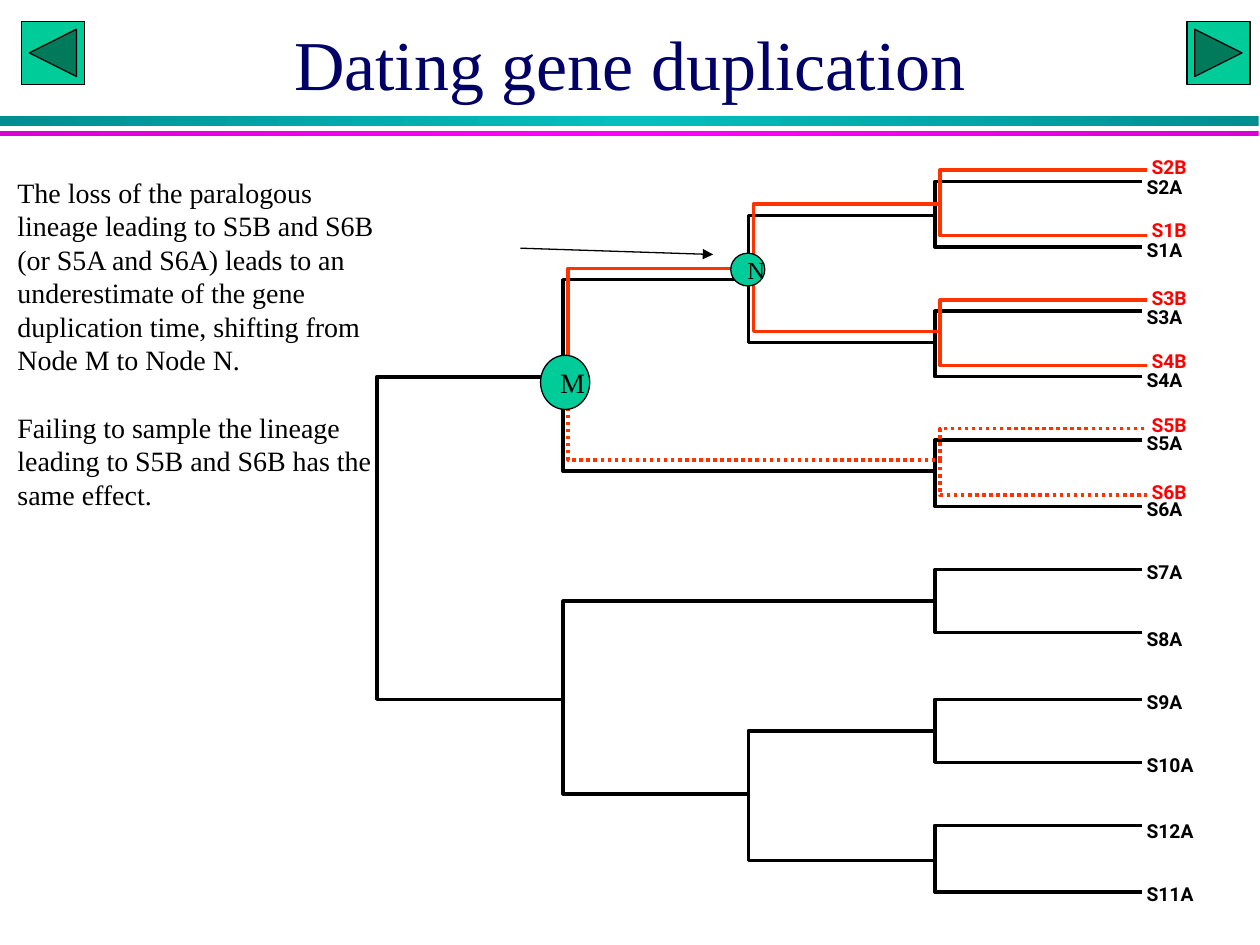
from copy import deepcopy

from lxml import etree
from pptx import Presentation
from pptx.dml.color import RGBColor
from pptx.enum.dml import MSO_LINE
from pptx.enum.shapes import MSO_CONNECTOR, MSO_SHAPE
from pptx.enum.text import MSO_ANCHOR, PP_ALIGN
from pptx.oxml.ns import qn
from pptx.util import Inches, Pt

RECTANGLE, OVAL = MSO_SHAPE.RECTANGLE, MSO_SHAPE.OVAL
BACK = MSO_SHAPE.ACTION_BUTTON_BACK_OR_PREVIOUS
FORWARD = MSO_SHAPE.ACTION_BUTTON_FORWARD_OR_NEXT
STRAIGHT, DOTTED = MSO_CONNECTOR.STRAIGHT, MSO_LINE.ROUND_DOT
LEFT, CENTER = PP_ALIGN.LEFT, PP_ALIGN.CENTER
TOP, MIDDLE = MSO_ANCHOR.TOP, MSO_ANCHOR.MIDDLE

SERIF, SANS = "Times New Roman", "Roboto"
BLACK, NAVY, GREEN = "000000", "000066", "00CC99"
LABEL_RED, BRANCH_RED = "FF0000", "FF3300"

# Branching columns and the offset of the duplicated (B) lineage
ROOT_X, CLADE_X, INNER_X, PAIR_X, TIP_X = 2.99, 4.47, 5.94, 7.42, 9.06
SHIFT_X, SHIFT_Y = 0.04, -0.09

# Node: (x, y, children); tip: (species, y, top of A label, top of B label)
DUPLICATED = (CLADE_X, 2.99, [
    (INNER_X, 2.22, [
        (PAIR_X, 1.71, [("S2", 1.44, 1.39, 1.23), ("S1", 1.96, 1.89, 1.73)]),
        (PAIR_X, 2.72, [("S3", 2.47, 2.42, 2.27), ("S4", 2.99, 2.92, 2.77)])]),
    (PAIR_X, 3.74, [("S5", 3.49, 3.42, 3.28), ("S6", 4.02, 3.95, 3.81)])])
OUTGROUP = (CLADE_X, 5.55, [
    (PAIR_X, 4.77, [("S7", 4.52, 4.45, None), ("S8", 5.02, 4.98, None)]),
    (INNER_X, 6.3, [
        (PAIR_X, 5.8, [("S9", 5.55, 5.48, None), ("S10", 6.05, 5.98, None)]),
        (PAIR_X, 6.83, [("S12", 6.55, 6.5, None), ("S11", 7.08, 7, None)])])])
ROOT = (ROOT_X, 4.27, [DUPLICATED, OUTGROUP])
LOST_Y = 3.74  # node of the S5B and S6B lineage


def color(code):
    return RGBColor.from_string(code)


class Slide:
    def __init__(self, page):
        self.page = page

    def outline(self, shape, code, width):
        shape.line.color.rgb = color(code)
        shape.line.width = Pt(width)

    def line_detail(self, shape, tag, **attributes):
        line = shape._element.spPr.find(qn("a:ln"))
        etree.SubElement(line, qn(tag), **attributes)

    def shape(self, kind, left, top, width, height):
        shape = self.page.shapes.add_shape(
            kind, Inches(left), Inches(top), Inches(width), Inches(height))
        shape.shadow.inherit = False
        return shape

    def green(self, kind, left, top, width, height):
        shape = self.shape(kind, left, top, width, height)
        shape.fill.solid()
        shape.fill.fore_color.rgb = color(GREEN)
        self.outline(shape, BLACK, 0.75)
        return shape

    def band(self, top, height, edge, middle):
        band = self.shape(RECTANGLE, 0, top, 9.99, height)
        band.line.fill.background()
        band.fill.gradient()
        band.fill.gradient_angle = 0
        stop_list = band._element.spPr.find(qn("a:gradFill")).find(qn("a:gsLst"))
        stop_list.append(deepcopy(stop_list[0]))
        for index, stop in enumerate(band.fill.gradient_stops):
            stop.position = index / 2
            stop.color.rgb = color(middle if index == 1 else edge)

    def add_words(self, frame, paragraphs, size, font=SERIF, code=BLACK,
                  bold=False, align=LEFT, anchor=TOP, gap=0):
        frame.vertical_anchor = anchor
        for index, words in enumerate(paragraphs):
            para = frame.add_paragraph() if index else frame.paragraphs[0]
            para.alignment = align
            if index:
                para.space_before = Pt(gap)
            span = para.add_run()
            span.text = words
            span.font.size, span.font.name = Pt(size), font
            span.font.bold = bold
            span.font.color.rgb = color(code)

    def text(self, left, top, width, height, paragraphs, size, wrap=True, **style):
        box = self.page.shapes.add_textbox(
            Inches(left), Inches(top), Inches(width), Inches(height))
        frame = box.text_frame
        frame.word_wrap = wrap
        if not wrap:
            frame.margin_left = frame.margin_right = 0
            frame.margin_top = frame.margin_bottom = 0
        self.add_words(frame, paragraphs, size, **style)

    def label(self, left, top, name, code):
        width = 0.1 * len(name)
        self.text(left, top, width, 0.19, [name], 11, wrap=False,
                  font=SANS, code=code, bold=True)

    def node(self, left, top, width, height, name, size):
        node = self.green(OVAL, left, top, width, height)
        node.text_frame.word_wrap = True
        self.add_words(node.text_frame, [name], size, align=CENTER, anchor=MIDDLE)

    def branch(self, start_x, start_y, end_x, end_y, code, dash):
        builder = self.page.shapes.build_freeform(Inches(start_x), Inches(start_y))
        builder.add_line_segments([(Inches(start_x), Inches(end_y)),
                                   (Inches(end_x), Inches(end_y))], close=False)
        branch = builder.convert_to_shape()
        branch.shadow.inherit = False
        branch.fill.background()
        self.outline(branch, code, 2)
        if dash:
            branch.line.dash_style = dash
        self.line_detail(branch, "a:round")

    def tree(self, node, copy_b=False, dash=None):
        x, y, children = node
        shift_x, shift_y = (SHIFT_X, SHIFT_Y) if copy_b else (0, 0)
        code = BRANCH_RED if copy_b else BLACK
        for child in children:
            is_tip = isinstance(child[0], str)
            end_x = TIP_X if is_tip else child[0]
            end_y = child[1]
            child_dash = DOTTED if copy_b and end_y == LOST_Y else dash
            self.branch(x + shift_x, y + shift_y, end_x + shift_x,
                        end_y + shift_y, code, child_dash)
            if not is_tip:
                self.tree(child, copy_b, child_dash)
            elif copy_b:
                self.label(9.14, child[3], child[0] + "B", LABEL_RED)
            else:
                self.label(9.1, child[2], child[0] + "A", BLACK)

    def arrow(self, start_x, start_y, end_x, end_y):
        arrow = self.page.shapes.add_connector(
            STRAIGHT, Inches(start_x), Inches(start_y), Inches(end_x), Inches(end_y))
        self.outline(arrow, BLACK, 0.75)
        self.line_detail(arrow, "a:tailEnd", type="triangle")
        etree.SubElement(arrow._element.spPr, qn("a:effectLst"))


def main():
    deck = Presentation()
    deck.slide_width, deck.slide_height = Inches(10), Inches(7.5)
    slide = Slide(deck.slides.add_slide(deck.slide_layouts[6]))

    # Header: bands, navigation buttons, title
    slide.band(0.92, 0.08, "008E8E", "00C0C0")
    slide.band(1.04, 0.04, "DA00DA", "FF00FF")
    slide.green(BACK, 0.17, 0.17, 0.5, 0.5)
    slide.green(FORWARD, 9.42, 0.17, 0.5, 0.5)
    slide.text(0.75, 0, 8.5, 1, ["Dating gene duplication"], 40,
               code=NAVY, align=CENTER, anchor=MIDDLE)

    # Species tree, then the duplicated lineage over it
    slide.tree(ROOT)
    slide.tree(DUPLICATED, copy_b=True)

    # Explanation
    slide.text(0.04, 1.34, 3.09, 2.79, [
        "The loss of the paralogous lineage leading to S5B and S6B (or S5A and "
        "S6A) leads to an underestimate of the gene duplication time, shifting "
        "from Node M to Node N.",
        "Failing to sample the lineage leading to S5B and S6B has the same effect.",
    ], 16, gap=19.2)

    # Marked nodes and the pointer to the later one
    slide.node(5.8, 2.01, 0.27, 0.26, "N", 14)
    slide.arrow(4.13, 1.97, 5.66, 2.02)
    slide.node(4.29, 2.82, 0.39, 0.43, "M", 16)

    deck.save("out.pptx")


if __name__ == "__main__":
    main()
